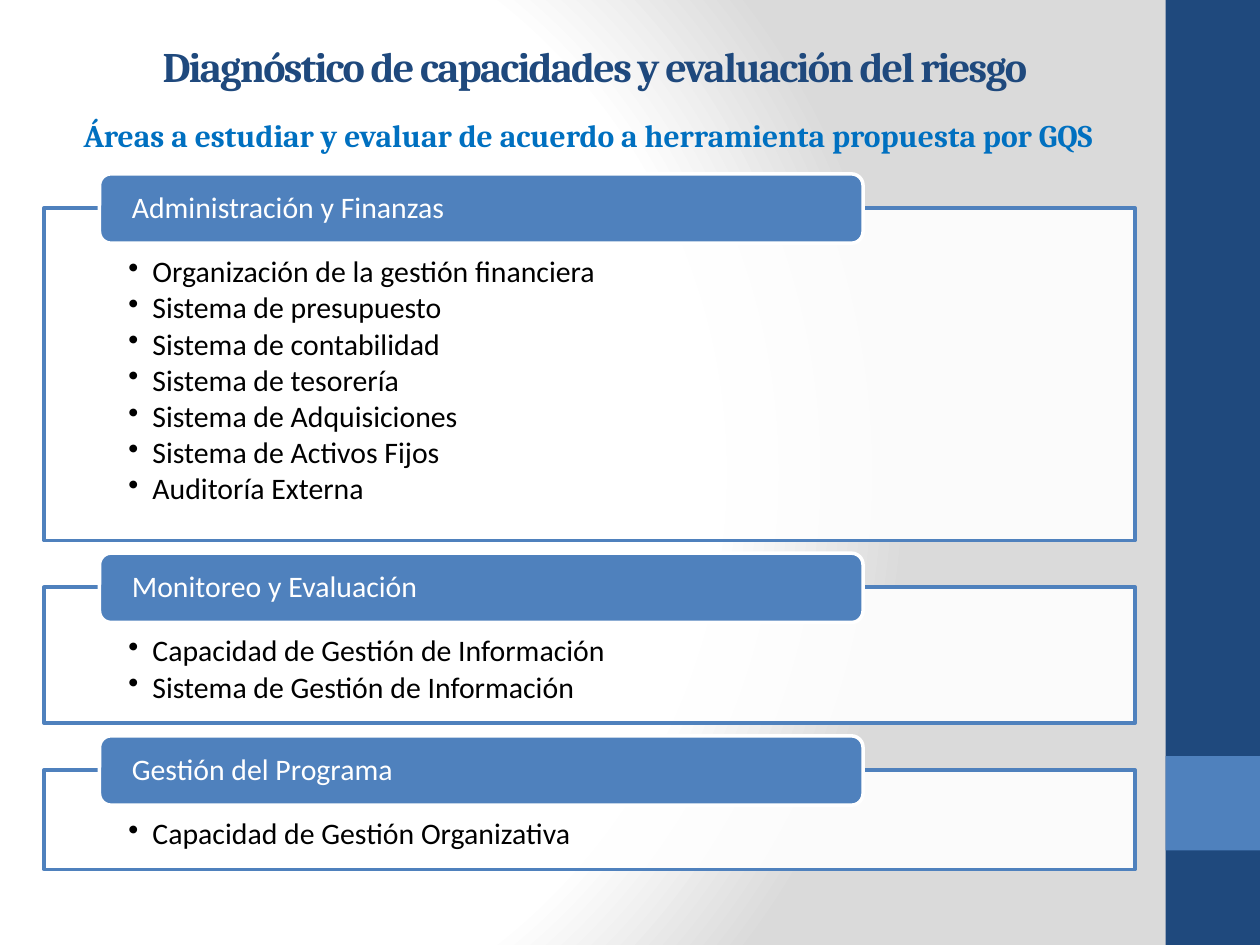
from lxml.etree import SubElement
from pptx import Presentation
from pptx.dml.color import RGBColor
from pptx.enum.shapes import MSO_SHAPE
from pptx.enum.text import MSO_ANCHOR, PP_ALIGN
from pptx.oxml import parse_xml
from pptx.oxml.ns import nsdecls, qn
from pptx.util import Inches, Pt

NAVY, BLUE, SKY = "1F497D", "4F81BD", "0070C0"
WHITE, BLACK, GREY = "FFFFFF", "000000", "DADADA"
COLS, ROWS = 100, 75
LEFT, WIDTH = 3.5, 86.6
TAB_HEIGHT, TAB_RISE, GAP = 5.5, 2.7, 1

# Heading, height of the frame in rows, bullets
AREAS = [
    ("Administración y Finanzas", 26.4, [
        "Organización de la gestión financiera",
        "Sistema de presupuesto",
        "Sistema de contabilidad",
        "Sistema de tesorería",
        "Sistema de Adquisiciones",
        "Sistema de Activos Fijos",
        "Auditoría Externa",
    ]),
    ("Monitoreo y Evaluación", 10.8, [
        "Capacidad de Gestión de Información",
        "Sistema de Gestión de Información",
    ]),
    ("Gestión del Programa", 7.9, ["Capacidad de Gestión Organizativa"]),
]


def rgb(color):
    return RGBColor.from_string(color)


class Deck:
    """Holds the style and the current slide; lengths are grid columns and rows."""

    head_font, body_font, body_size = "Cambria", "Calibri", 17

    def __init__(self):
        self.prs = Presentation()
        self.prs.slide_width, self.prs.slide_height = Inches(10), Inches(7.5)
        self.s = self.prs.slides.add_slide(self.prs.slide_layouts[6])

    def x(self, cols):
        return round(self.prs.slide_width * cols / COLS)

    def y(self, rows):
        return round(self.prs.slide_height * rows / ROWS)

    def place(self, x, y, w, h):
        return self.x(x), self.y(y), self.x(w), self.y(h)

    def background(self):
        """Radial gradient, white out to three quarters and then grey."""
        self.s.background.fill.solid()
        bg = self.s.element.find(".//" + qn("p:bgPr"))
        stops = "".join(
            f'<a:gs pos="{pos}"><a:srgbClr val="{color}"/></a:gs>'
            for pos, color in [(0, WHITE), (75000, WHITE), (100000, GREY)])
        bg.replace(bg[0], parse_xml(
            f'<a:gradFill {nsdecls("a")} rotWithShape="1"><a:gsLst>{stops}</a:gsLst>'
            '<a:path path="circle">'
            '<a:fillToRect l="20000" t="50000" r="100000" b="50000"/>'
            '</a:path></a:gradFill>'))

    def shape(self, box, fill, line=None, kind=MSO_SHAPE.RECTANGLE, alpha=None):
        sp = self.s.shapes.add_shape(kind, *self.place(*box))
        sp.shadow.inherit = False
        sp.fill.solid()
        sp.fill.fore_color.rgb = rgb(fill)
        if alpha:
            color = sp.element.spPr.find(".//" + qn("a:srgbClr"))
            SubElement(color, qn("a:alpha"), val=str(alpha * 1000))
        if line:
            sp.line.color.rgb = rgb(line)
            sp.line.width = Pt(2)
        else:
            sp.line.fill.background()
        return sp

    def frame(self, sp, anchor, side, top=0, bottom=0):
        tf = sp.text_frame
        tf.word_wrap = True
        tf.vertical_anchor = anchor
        tf.margin_left = tf.margin_right = self.x(side)
        tf.margin_top, tf.margin_bottom = self.y(top), self.y(bottom)
        return tf

    def set_text(self, p, text, color, font, size, bold=False, align=PP_ALIGN.LEFT):
        p.text = text
        p.alignment = align
        p.font.name, p.font.size, p.font.bold = font, Pt(size), bold
        p.font.color.rgb = rgb(color)

    def heading(self, text, box, color, size, spacing=0):
        sp = self.s.shapes.add_textbox(*self.place(*box))
        p = self.frame(sp, MSO_ANCHOR.MIDDLE, 1, 0.5, 0.5).paragraphs[0]
        self.set_text(p, text, color, self.head_font, size, True, PP_ALIGN.CENTER)
        if spacing:
            p.runs[0].font._element.set("spc", str(spacing * 100))

    def bullet(self, p):
        """Hanging bullet; the schema wants it before the default run properties."""
        pPr = p._p.get_or_add_pPr()
        pPr.set("marL", str(self.x(1.9)))
        pPr.set("indent", str(-self.x(1.9)))
        mark = parse_xml(f'<a:buChar {nsdecls("a")} char="•"/>')
        pPr.find(qn("a:defRPr")).addprevious(mark)

    def bullet_box(self, items, box):
        sp = self.shape(box, WHITE, BLUE, alpha=90)
        tf = self.frame(sp, MSO_ANCHOR.TOP, 6.7, 3.9, 1.3)
        for i, item in enumerate(items):
            p = tf.add_paragraph() if i else tf.paragraphs[0]
            self.set_text(p, item, BLACK, self.body_font, self.body_size)
            p.line_spacing, p.space_after = 0.9, Pt(2.3)
            self.bullet(p)

    def tab(self, text, box):
        sp = self.shape(box, BLUE, WHITE, MSO_SHAPE.ROUNDED_RECTANGLE)
        p = self.frame(sp, MSO_ANCHOR.MIDDLE, 2.3).paragraphs[0]
        self.set_text(p, text, WHITE, self.body_font, self.body_size)
        p.line_spacing = 0.9

    def area(self, title, items, top, height):
        """A bullet box with a tab over its upper edge; returns the bottom row."""
        box_top = top + TAB_RISE
        self.bullet_box(items, (LEFT, box_top, WIDTH, height))
        self.tab(title, (LEFT + 4.4, top, 60.6, TAB_HEIGHT))
        return box_top + height


def main():
    deck = Deck()
    deck.background()
    deck.shape((92.5, 0, 7.5, ROWS), NAVY)
    deck.shape((92.5, 60, 7.5, 7.5), BLUE)
    deck.heading("Diagnóstico de capacidades y evaluación del riesgo",
                 (3.5, 2.1, 87.4, 6.3), NAVY, 24, spacing=-1)
    top = 13.8
    for title, height, items in AREAS:
        top = deck.area(title, items, top, height) + GAP
    deck.heading("Áreas a estudiar y evaluar de acuerdo a herramienta propuesta por GQS",
                 (1.7, 7.6, 90, 6.3), SKY, 18)
    deck.prs.save("out.pptx")


if __name__ == "__main__":
    main()
